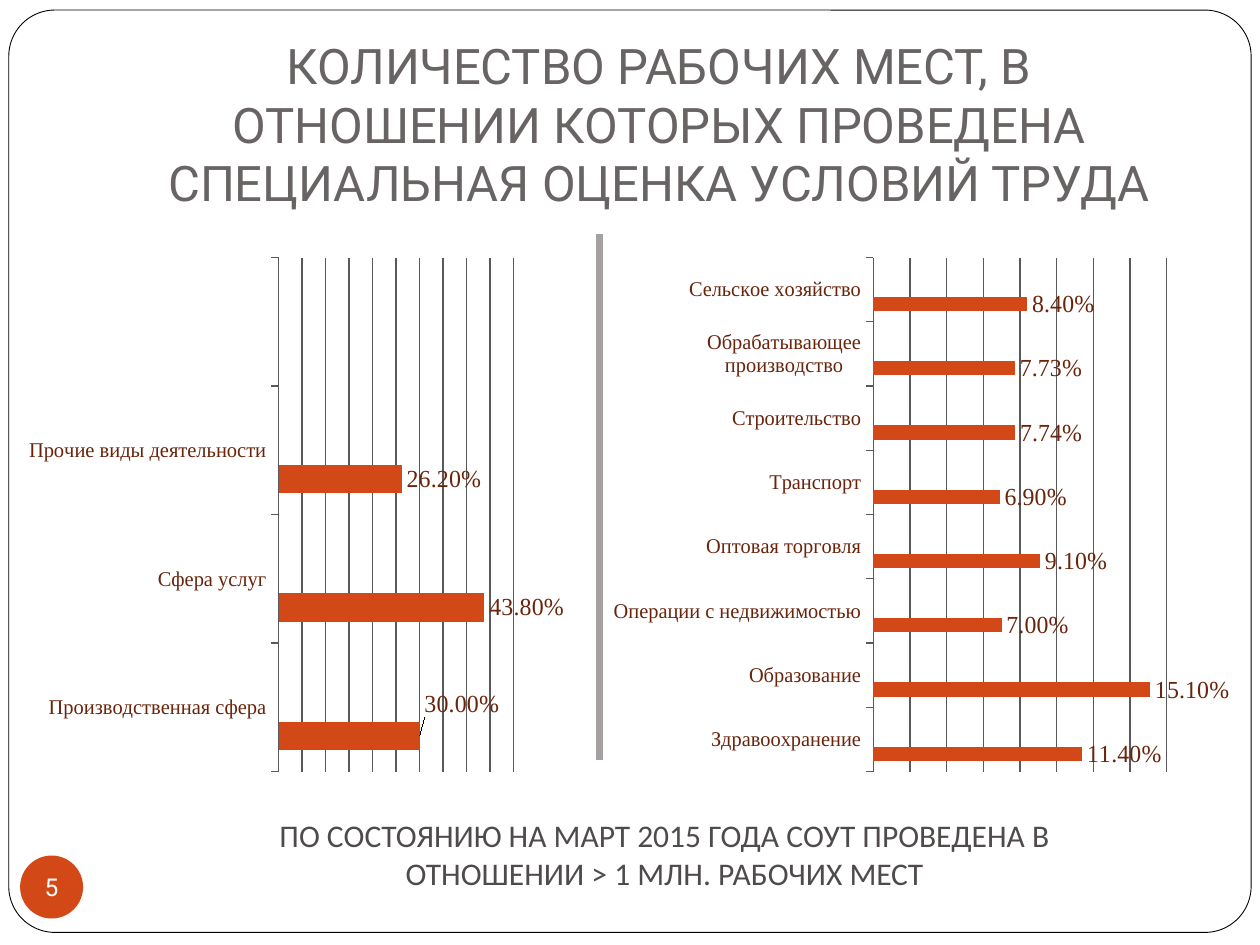
from pptx import Presentation
from pptx import util as u
from pptx.chart import data as cd
from pptx.dml import color
from pptx.enum import chart as ch, shapes, text
from pptx.oxml import parse_xml
from pptx.oxml.ns import nsdecls

COLS, ROWS = 100, 75
COLORS = {
    "paper": "FFFFFF", "frame": "000000", "title": "696464", "note": "4F4B4B",
    "accent": "D34817", "second": "9B2D1F", "third": "A28E6A",
    "label": "69240C", "grid": "595959", "divider": "A6A1A1",
}


def rgb(name):
    return color.RGBColor.from_string(COLORS[name])


def layout_xml(target=None, **shares):
    """Manual chart layout, in shares of the chart's size."""
    inner = ""
    if target:
        inner = (f'<c:layoutTarget val="{target}"/>'
                 '<c:xMode val="edge"/><c:yMode val="edge"/>')
    inner += "".join(f'<c:{key} val="{val}"/>' for key, val in shares.items())
    return parse_xml(f'<c:layout {nsdecls("c")}><c:manualLayout>{inner}'
                     "</c:manualLayout></c:layout>")


class Deck:
    def __init__(self):
        self.prs = Presentation()
        self.prs.slide_width, self.prs.slide_height = u.Inches(10), u.Inches(7.5)
        self.s = self.prs.slides.add_slide(self.prs.slide_layouts[6])

    def grid(self, x, y, *size):
        """Columns and rows of the grid as lengths."""
        col, row = self.prs.slide_width / COLS, self.prs.slide_height / ROWS
        return [int(v * (row if i % 2 else col)) for i, v in enumerate((x, y, *size))]

    def font(self, font, size, name, tint):
        font.size, font.name = u.Pt(size), name
        font.color.rgb = rgb(tint)

    def label(self, sp, words, size, name, tint, anchor):
        tf = sp.text_frame
        tf.text = words
        tf.vertical_anchor = anchor
        p = tf.paragraphs[0]
        p.alignment = text.PP_ALIGN.CENTER
        self.font(p.runs[0].font, size, name, tint)
        return tf

    def text(self, box, words, size, name, tint, anchor=text.MSO_ANCHOR.TOP):
        sp = self.s.shapes.add_textbox(*self.grid(*box))
        tf = self.label(sp, words, size, name, tint, anchor)
        tf.word_wrap = True
        return tf

    def shape(self, kind, box, fill, line=None):
        sp = self.s.shapes.add_shape(kind, *self.grid(*box))
        sp.shadow.inherit = False
        sp.fill.solid()
        sp.fill.fore_color.rgb = rgb(fill)
        if line:
            sp.line.color.rgb, sp.line.width = rgb(line), u.Pt(0.5)
        else:
            sp.line.fill.background()
        return sp

    def line(self, start, end, tint, width):
        ln = self.s.shapes.add_connector(
            shapes.MSO_CONNECTOR.STRAIGHT, *self.grid(*start), *self.grid(*end))
        ln.line.color.rgb, ln.line.width = rgb(tint), u.Pt(width)
        ln._element.spPr.append(parse_xml(f'<a:effectLst {nsdecls("a")}/>'))

    def bars(self, box, cats, vals, top, step, plot_x, plot_w):
        data = cd.CategoryChartData(number_format="0.00%")
        data.categories = cats
        data.add_series("Series 1", vals)
        for name in ("Series 2", "Series 3"):
            data.add_series(name, [None] * len(cats))
        chart = self.s.shapes.add_chart(
            ch.XL_CHART_TYPE.BAR_CLUSTERED, *self.grid(*box), data).chart
        chart.has_legend = chart.has_title = False
        self.font(chart.font, 18, "Times New Roman", "frame")

        # Axes and gridlines
        cat, val = chart.category_axis, chart.value_axis
        cat.major_tick_mark = ch.XL_TICK_MARK.OUTSIDE
        self.font(cat.tick_labels.font, 12, "Times New Roman", "label")
        val.minimum_scale, val.maximum_scale, val.major_unit = 0, top, step
        val.has_major_gridlines, val.visible = True, False
        for line in (cat.format.line, val.major_gridlines.format.line):
            line.color.rgb, line.width = rgb("grid"), u.Pt(0.75)

        # Bars and their labels
        plot = chart.plots[0]
        plot.gap_width, plot.overlap, plot.vary_by_categories = 150, 0, False
        for series, tint in zip(plot.series, ("accent", "second", "third")):
            series.format.fill.solid()
            series.format.fill.fore_color.rgb = rgb(tint)
        labels = plot.series[0].data_labels
        labels.show_value = True
        labels.number_format, labels.number_format_is_linked = "0.00%", False
        labels.position = ch.XL_LABEL_POSITION.OUTSIDE_END
        self.font(labels.font, 14, "Times New Roman", "label")

        # Plot area placed inside the chart
        area = chart._chartSpace.chart.plotArea
        for old in area.xpath("c:layout"):
            area.remove(old)
        area.insert(0, layout_xml("inner", x=plot_x, y=0.02, w=plot_w, h=0.96))
        return chart

    def raise_label(self, chart, index, share):
        label = chart.plots[0].series[0].points[index].data_label
        self.font(label.font, 14, "Times New Roman", "label")
        label.position = ch.XL_LABEL_POSITION.OUTSIDE_END
        dlbl = chart._chartSpace.xpath(".//c:dLbl")[0]
        dlbl.insert(1, layout_xml(x=0, y=-share))


def main():
    d = Deck()

    # Frame and title
    frame = d.shape(shapes.MSO_SHAPE.ROUNDED_RECTANGLE,
                    (0.7, 0.8, 98.6, 73.2), "paper", "frame")
    frame.adjustments[0] = 0.05
    title = d.text((9.8, 2.9, 85, 14.9),
                   "КОЛИЧЕСТВО РАБОЧИХ МЕСТ, В ОТНОШЕНИИ КОТОРЫХ ПРОВЕДЕНА "
                   "СПЕЦИАЛЬНАЯ ОЦЕНКА УСЛОВИЙ ТРУДА",
                   28, "Roboto", "title", text.MSO_ANCHOR.BOTTOM)
    title.margin_bottom = u.Inches(0.1)

    # Page number
    badge = d.shape(shapes.MSO_SHAPE.OVAL, (1.6, 67.9, 5, 5), "accent")
    tf = d.label(badge, "5", 14, "Roboto", "paper", text.MSO_ANCHOR.MIDDLE)
    tf.word_wrap = False
    tf.margin_left = tf.margin_right = tf.margin_top = tf.margin_bottom = 0

    # Shares by sphere, with one empty category on top
    spheres = d.bars((2.3, 19.6, 42.5, 42.5),
                     ["Производственная сфера", "Сфера услуг",
                      "Прочие виды деятельности", ""],
                     [0.3, 0.438, 0.262, None], 0.5, 0.05, 0.46, 0.45)
    d.raise_label(spheres, 0, 0.06)

    # Shares by industry
    industries = {
        "Здравоохранение": 0.114, "Образование": 0.151,
        "Операции с недвижимостью": 0.07, "Оптовая торговля": 0.091,
        "Транспорт": 0.069, "Строительство": 0.0774,
        "Обрабатывающее производство": 0.0773, "Сельское хозяйство": 0.084,
    }
    d.bars((48.7, 19.6, 48.9, 42.5), list(industries), list(industries.values()),
           0.16, 0.02, 0.42, 0.49)

    # Divider and closing note
    d.line((47.6, 18.6), (47.6, 60.3), "divider", 3.75)
    d.text((18.5, 64.3, 68.5, 7.1),
           "ПО СОСТОЯНИЮ НА МАРТ 2015 ГОДА СОУТ ПРОВЕДЕНА В ОТНОШЕНИИ "
           "> 1 МЛН. РАБОЧИХ МЕСТ", 18, "Calibri", "note")

    d.prs.save("out.pptx")


if __name__ == "__main__":
    main()
